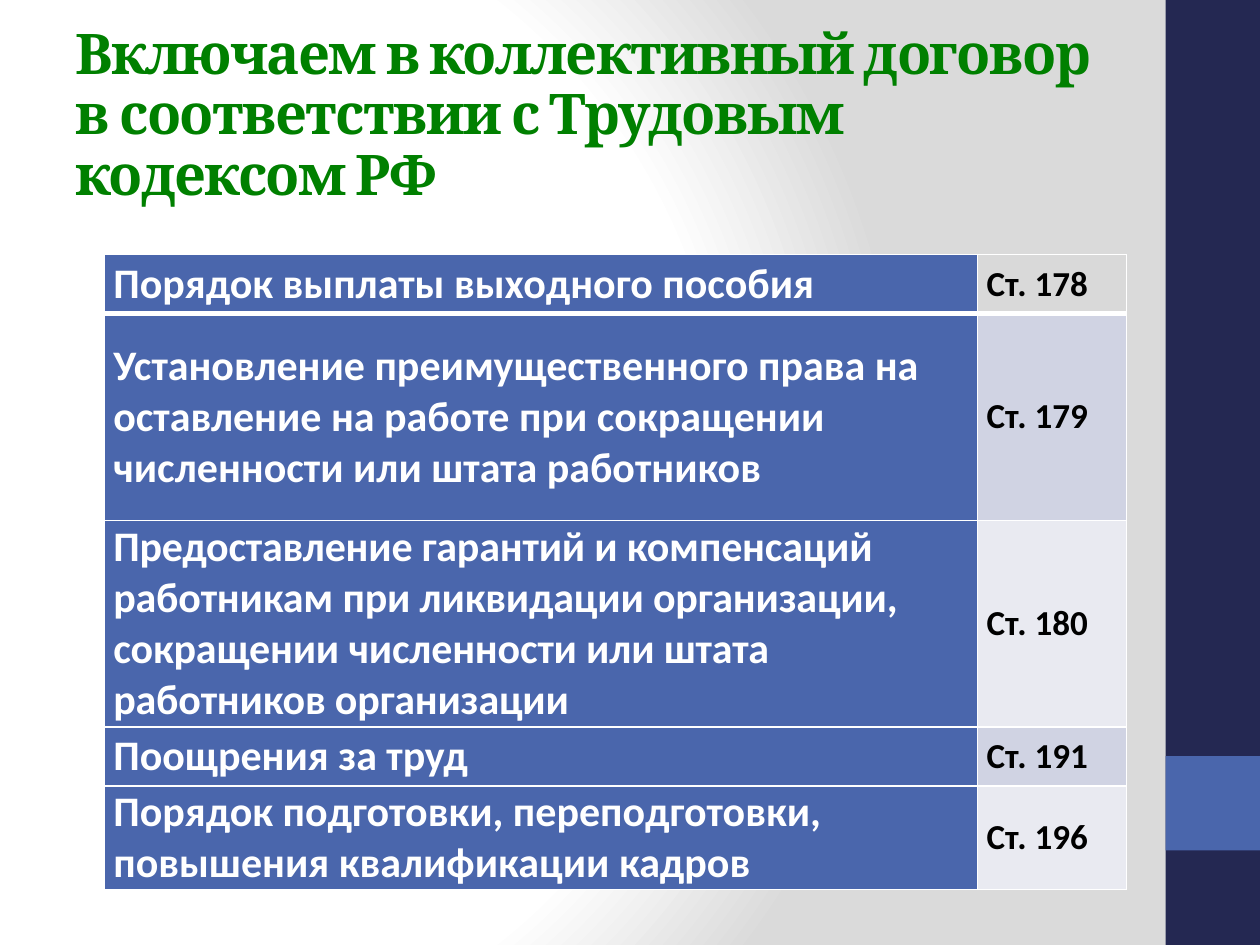
from dataclasses import dataclass

from pptx import Presentation, oxml
from pptx import util as u
from pptx.dml import color
from pptx.enum import shapes, text
from pptx.oxml import ns


@dataclass(frozen=True)
class Theme:
    navy: str = "242852"
    blue: str = "4A66AC"
    green: str = "008000"
    white: str = "FFFFFF"
    black: str = "000000"
    backdrop: str = "DADADA"
    header: str = "D9D9D9"
    bands: tuple = ("E9EAF1", "D0D3E3")
    heading_font: str = "Cambria"
    body_font: str = "Calibri"
    title_size: int = 32
    topic_size: int = 24
    article_size: int = 20


THEME = Theme()
TITLE = "Включаем в коллективный договор в соответствии с Трудовым кодексом РФ"
ROWS = [
    ("Порядок выплаты выходного пособия", "Ст. 178", 0.47, 0),
    ("Установление преимущественного права на оставление на работе "
     "при сокращении численности или штата работников", "Ст. 179", 1.64, 0),
    ("Предоставление гарантий и компенсаций работникам при ликвидации "
     "организации, сокращении численности или штата работников организации",
     "Ст. 180", 1.64, -10),
    ("Поощрения за труд", "Ст. 191", 0.47, 0),
    ("Порядок подготовки, переподготовки, повышения квалификации кадров",
     "Ст. 196", 0.82, 0),
]
COLUMN_WIDTHS = (6.93, 1.18)


def apply_format(target, values):
    for name, value in values.items():
        setattr(target, name, value)


def paint(fill, rgb):
    fill.solid()
    fill.fore_color.rgb = color.RGBColor.from_string(rgb)


def write_text(frame, words, font, size, rgb, spacing=0):
    para = frame.paragraphs[0]
    para.alignment = text.PP_ALIGN.LEFT
    span = para.add_run()
    span.text = words
    apply_format(span.font, {"name": font, "size": u.Pt(size), "bold": True})
    span.font.color.rgb = color.RGBColor.from_string(rgb)
    if spacing:
        span.font._element.set("spc", str(spacing))
    return para


def set_background(page):
    paint(page.background.fill, THEME.white)
    stops = ((0, THEME.white), (75, THEME.white), (100, THEME.backdrop))
    stop_xml = "".join(
        f'<a:gs pos="{place * 1000}"><a:srgbClr val="{rgb}"/></a:gs>'
        for place, rgb in stops)
    gradient = oxml.parse_xml(
        f'<a:gradFill {ns.nsdecls("a")} rotWithShape="1"><a:gsLst>{stop_xml}</a:gsLst>'
        '<a:path path="circle"><a:fillToRect l="20000" t="50000" r="100000" b="50000"/>'
        '</a:path></a:gradFill>')
    solid = page._element.xpath("p:cSld/p:bg/p:bgPr/a:solidFill")[0]
    solid.getparent().replace(solid, gradient)


def add_side_band(page, top, height, rgb):
    band = page.shapes.add_shape(
        shapes.MSO_SHAPE.RECTANGLE,
        u.Inches(9.25), u.Inches(top), u.Inches(0.75), u.Inches(height))
    band.shadow.inherit = False
    paint(band.fill, rgb)
    band.line.fill.background()


def set_title(page):
    title = page.shapes.title
    apply_format(title, {
        "left": u.Inches(0.5), "top": u.Inches(0.3),
        "width": u.Inches(8.33), "height": u.Inches(1.25)})
    apply_format(title.text_frame, {
        "word_wrap": True, "auto_size": text.MSO_AUTO_SIZE.NONE,
        "vertical_anchor": text.MSO_ANCHOR.MIDDLE})
    para = write_text(title.text_frame, TITLE, THEME.heading_font,
                      THEME.title_size, THEME.green, -100)
    para.line_spacing = 0.9


def set_borders(cell, widths):
    properties = cell._tc.get_or_add_tcPr()
    for side, width in widths.items():
        properties.append(oxml.parse_xml(
            f'<a:ln{side} {ns.nsdecls("a")} w="{u.Pt(width)}"><a:solidFill>'
            f'<a:srgbClr val="{THEME.white}"/></a:solidFill></a:ln{side}>'))


def fill_cell(cell, row, words, size, rgb, fill, spacing=0):
    set_borders(cell, {"L": 1, "R": 1, "T": 3 if row == 1 else 1,
                       "B": 3 if row == 0 else 1})
    paint(cell.fill, fill)
    apply_format(cell, {
        "margin_left": u.Inches(0.07), "margin_right": u.Inches(0.07),
        "margin_top": 0, "margin_bottom": 0,
        "vertical_anchor": text.MSO_ANCHOR.MIDDLE})
    write_text(cell.text_frame, words, THEME.body_font, size, rgb, spacing)


def add_articles_table(page):
    table = page.shapes.add_table(
        len(ROWS), len(COLUMN_WIDTHS), u.Inches(0.83), u.Inches(2.02),
        u.Inches(sum(COLUMN_WIDTHS)), u.Inches(sum(row[2] for row in ROWS))).table
    for column, width in zip(table.columns, COLUMN_WIDTHS):
        column.width = u.Inches(width)
    for index, (topic, article, height, spacing) in enumerate(ROWS):
        table.rows[index].height = u.Inches(height)
        fill_cell(table.cell(index, 0), index, topic, THEME.topic_size,
                  THEME.white, THEME.blue, spacing)
        fill_cell(table.cell(index, 1), index, article, THEME.article_size,
                  THEME.black, THEME.bands[index % 2] if index else THEME.header)


def main():
    deck = Presentation()
    apply_format(deck, {"slide_width": u.Inches(10), "slide_height": u.Inches(7.5)})
    page = deck.slides.add_slide(deck.slide_layouts[5])
    set_background(page)
    add_side_band(page, 0, 7.5, THEME.navy)
    add_side_band(page, 6, 0.75, THEME.blue)
    set_title(page)
    add_articles_table(page)
    deck.save("out.pptx")


if __name__ == "__main__":
    main()
